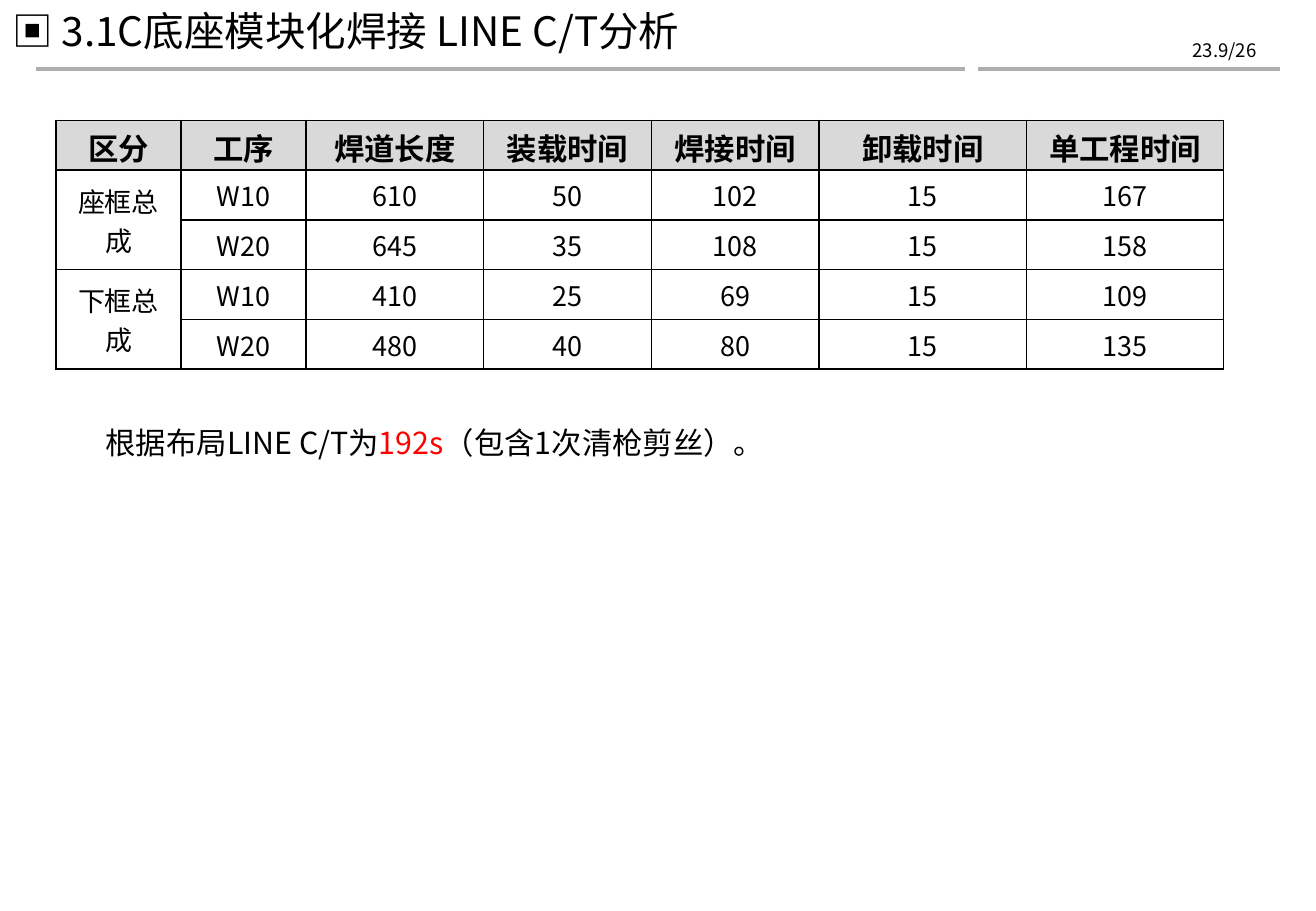
from lxml import etree
from pptx import Presentation
from pptx import util as u
from pptx.dml.color import RGBColor
from pptx.enum import shapes, text
from pptx.oxml import ns

TITLE = "▣ 3.1C底座模块化焊接 LINE C/T分析"
DATE = "23.9/26"
HEADER = ["区分", "工序", "焊道长度", "装载时间", "焊接时间", "卸载时间", "单工程时间"]
GROUPS = {
    "座框总成": [["W10", 610, 50, 102, 15, 167], ["W20", 645, 35, 108, 15, 158]],
    "下框总成": [["W10", 410, 25, 69, 15, 109], ["W20", 480, 40, 80, 15, 135]],
}
BLACK = RGBColor(0, 0, 0)
RED = RGBColor(255, 0, 0)
SILVER = RGBColor(0xAE, 0xAE, 0xAE)
PALE = RGBColor(0xD9, 0xD9, 0xD9)
SUMMARY = [("根据布局LINE C/T为", BLACK), ("192s", RED), ("（包含1次清枪剪丝）。", BLACK)]
SANS_SC = "Noto Sans CJK SC"
SANS_KR = "Noto Sans CJK KR"

RULES = [(30, 794), (805, 1053)]
RULE_Y = 57
COLUMNS = [103, 103, 146, 138, 138, 171, 162]
ROW_HEIGHT = 41
TABLE_LEFT, TABLE_TOP = 46, 99
CELL_PAD = 4


def px(length):
    return u.Emu(length * 9144)


def add_span(para, words, size, color=BLACK, bold=False, font=SANS_SC):
    span = para.add_run()
    span.text = words
    span.font.size = u.Pt(size)
    span.font.bold = bold
    span.font.color.rgb = color
    span.font.name = font
    east_asian = etree.SubElement(span.font._element, ns.qn("a:ea"))
    east_asian.set("typeface", font)


def prepare(box, place, align=text.PP_ALIGN.LEFT):
    box.left, box.top, box.width, box.height = map(px, place)
    frame = box.text_frame
    frame.word_wrap = True
    frame.auto_size = text.MSO_AUTO_SIZE.NONE
    frame.vertical_anchor = text.MSO_ANCHOR.MIDDLE
    para = frame.paragraphs[0]
    para.alignment = align
    return para


def add_text_box(page, place, align=text.PP_ALIGN.LEFT):
    return prepare(page.shapes.add_textbox(0, 0, 0, 0), place, align)


def add_borders(cell):
    properties = cell._tc.get_or_add_tcPr()
    for side in ("lnL", "lnR", "lnT", "lnB"):
        line = etree.SubElement(properties, ns.qn(f"a:{side}"), w=str(u.Pt(1)))
        fill = etree.SubElement(line, ns.qn("a:solidFill"))
        etree.SubElement(fill, ns.qn("a:srgbClr"), val=str(BLACK))


def fill_cell(cell, value, is_header):
    add_borders(cell)
    cell.margin_top = px(CELL_PAD)
    cell.margin_bottom = px(0 if is_header else CELL_PAD)
    if is_header:
        cell.fill.solid()
        cell.fill.fore_color.rgb = PALE
    else:
        cell.fill.background()
        cell.vertical_anchor = text.MSO_ANCHOR.MIDDLE
    if value is not None:
        para = cell.text_frame.paragraphs[0]
        para.alignment = text.PP_ALIGN.CENTER
        add_span(para, str(value), 18 if is_header else 16, bold=is_header)


def add_rules(page):
    for start, end in RULES:
        rule = page.shapes.add_connector(
            shapes.MSO_CONNECTOR.STRAIGHT, px(start), px(RULE_Y), px(end), px(RULE_Y))
        rule.line.color.rgb = SILVER
        rule.line.width = u.Pt(2)
        etree.SubElement(rule._element.spPr, ns.qn("a:effectLst"))


def add_times(page):
    rows = [HEADER]
    for group, processes in GROUPS.items():
        for index, process in enumerate(processes):
            rows.append([None if index else group] + process)
    table = page.shapes.add_table(
        len(rows), len(COLUMNS), px(TABLE_LEFT), px(TABLE_TOP),
        px(sum(COLUMNS)), px(ROW_HEIGHT * len(rows))).table
    for column, width in zip(table.columns, COLUMNS):
        column.width = px(width)
    for r, values in enumerate(rows):
        table.rows[r].height = px(ROW_HEIGHT)
        for c, value in enumerate(values):
            fill_cell(table.cell(r, c), value, r == 0)
    top = 1
    for processes in GROUPS.values():
        bottom = top + len(processes) - 1
        table.cell(top, 0).merge(table.cell(bottom, 0))
        top = bottom + 1


def main():
    deck = Presentation()
    deck.slide_width, deck.slide_height = px(1083), px(750)
    page = deck.slides.add_slide(deck.slide_layouts[5])
    add_rules(page)
    date = add_text_box(page, (935, 27, 109, 29), text.PP_ALIGN.RIGHT)
    add_span(date, DATE, 11, font=SANS_KR)
    add_span(prepare(page.shapes.title, (0, 0, 912, 50)), TITLE, 24)
    add_times(page)
    summary = add_text_box(page, (77, 344, 614, 40))
    for words, color in SUMMARY:
        add_span(summary, words, 18, color)
    deck.save("out.pptx")


if __name__ == "__main__":
    main()
